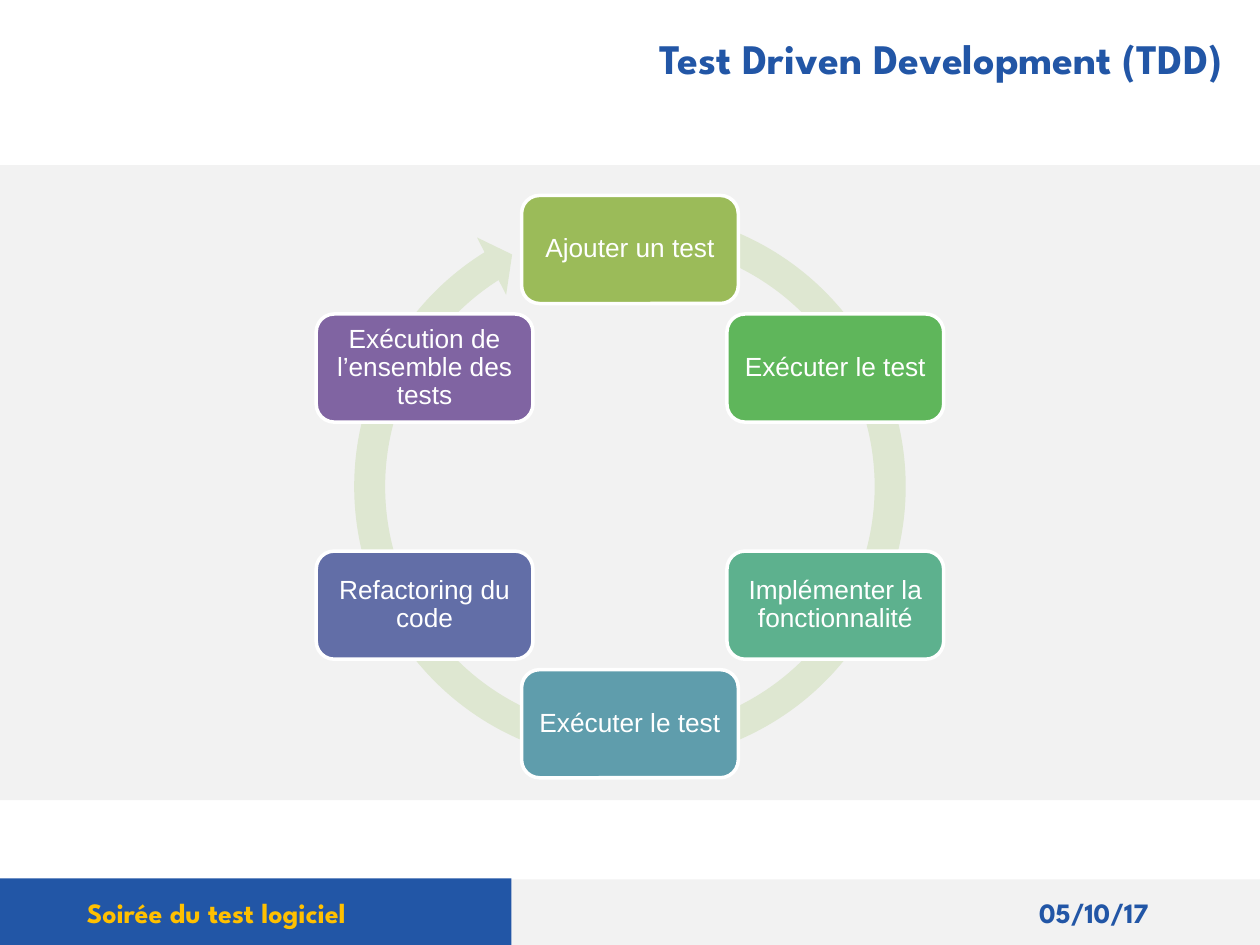
from math import cos, radians, sin

from pptx import Presentation
from pptx.dml.color import RGBColor
from pptx.enum.shapes import MSO_SHAPE as Shape
from pptx.enum.text import MSO_ANCHOR as Anchor, PP_ALIGN as Align
from pptx.util import Cm, Pt

BLUE, YELLOW, GREY, WHITE = "2256A6", "FFC000", "F2F2F2", "FFFFFF"
TITLE_FONT, STEP_FONT = "League Spartan", "Arial"

# Cycle geometry, in cm
CENTER_X, CENTER_Y, RADIUS = 12.7, 9.81, 4.78
STEP_WIDTH, STEP_HEIGHT = 4.37, 2.18
RING_SIZE = 11.79

# Steps clockwise from the top
STEPS = [
    ("Ajouter un test", "9BBB59"),
    ("Exécuter le test", "5FB65B"),
    ("Implémenter la fonctionnalité", "5DB18E"),
    ("Exécuter le test", "5F9DAC"),
    ("Refactoring du code", "626EA7"),
    ("Exécution de l’ensemble des tests", "8064A2"),
]


def rgb(value):
    return RGBColor.from_string(value)


def add_filled(slide, kind, left, top, width, height, fill):
    """Add a preset shape with a plain fill and no outline."""
    shape = slide.shapes.add_shape(kind, Cm(left), Cm(top), Cm(width), Cm(height))
    shape.shadow.inherit = False
    shape.fill.solid()
    shape.fill.fore_color.rgb = rgb(fill)
    shape.line.fill.background()
    return shape


def write(frame, text, size, font_name, color, bold=False, align=Align.LEFT):
    """Write one paragraph and format it."""
    frame.word_wrap = True
    frame.text = text
    paragraph = frame.paragraphs[0]
    paragraph.alignment = align
    font = paragraph.runs[0].font
    font.size = Pt(size)
    font.name = font_name
    font.bold = bold
    font.color.rgb = rgb(color)
    return paragraph


def add_label(slide, text, left, top, width, height, size, color, align=Align.LEFT):
    label = slide.shapes.add_textbox(Cm(left), Cm(top), Cm(width), Cm(height))
    write(label.text_frame, text, size, TITLE_FONT, color, True, align)


def add_step(slide, text, fill, angle):
    """Add a step centred on the circle, at an angle clockwise from the top."""
    left = CENTER_X + RADIUS * sin(radians(angle)) - STEP_WIDTH / 2
    top = CENTER_Y - RADIUS * cos(radians(angle)) - STEP_HEIGHT / 2
    step = add_filled(slide, Shape.ROUNDED_RECTANGLE, left, top,
                      STEP_WIDTH, STEP_HEIGHT, fill)
    step.line.color.rgb = rgb(WHITE)
    step.line.width = Pt(2)
    frame = step.text_frame
    frame.margin_left = frame.margin_right = Cm(0.25)
    frame.margin_top = frame.margin_bottom = Cm(0.25)
    frame.vertical_anchor = Anchor.MIDDLE
    paragraph = write(frame, text, 15, STEP_FONT, WHITE, align=Align.CENTER)
    paragraph.line_spacing = 0.9


def add_cycle(slide):
    ring = add_filled(slide, Shape.CIRCULAR_ARROW, CENTER_X - RING_SIZE / 2,
                      CENTER_Y - RING_SIZE / 2, RING_SIZE, RING_SIZE, "DEE7D1")
    for index, value in enumerate((0.053, 3.126, 142.73, 171.008, 0.055)):
        ring.adjustments[index] = value
    for index, (text, fill) in enumerate(STEPS):
        add_step(slide, text, fill, index * 360 / len(STEPS))


def main():
    presentation = Presentation()
    presentation.slide_width, presentation.slide_height = Cm(25.4), Cm(19.05)
    slide = presentation.slides.add_slide(presentation.slide_layouts[6])

    # Footer
    add_filled(slide, Shape.RECTANGLE, 0, 17.73, 25.4, 1.32, GREY)
    add_filled(slide, Shape.RECTANGLE, 0, 17.71, 10.31, 1.34, BLUE)
    add_label(slide, "05/10/17", 20.7, 17.93, 4.7, 0.94, 16, BLUE)
    add_label(slide, "Soirée du test logiciel", 1.5, 17.93, 12.6, 0.94, 16, YELLOW)

    # Cycle on its grey band
    add_filled(slide, Shape.RECTANGLE, 0, 3.33, 25.4, 12.8, GREY)
    add_cycle(slide)

    # Title
    add_label(slide, "Test Driven Development (TDD)", 9.02, 0.53, 15.87, 1.19,
              24, BLUE, Align.RIGHT)

    presentation.save("out.pptx")


if __name__ == "__main__":
    main()
